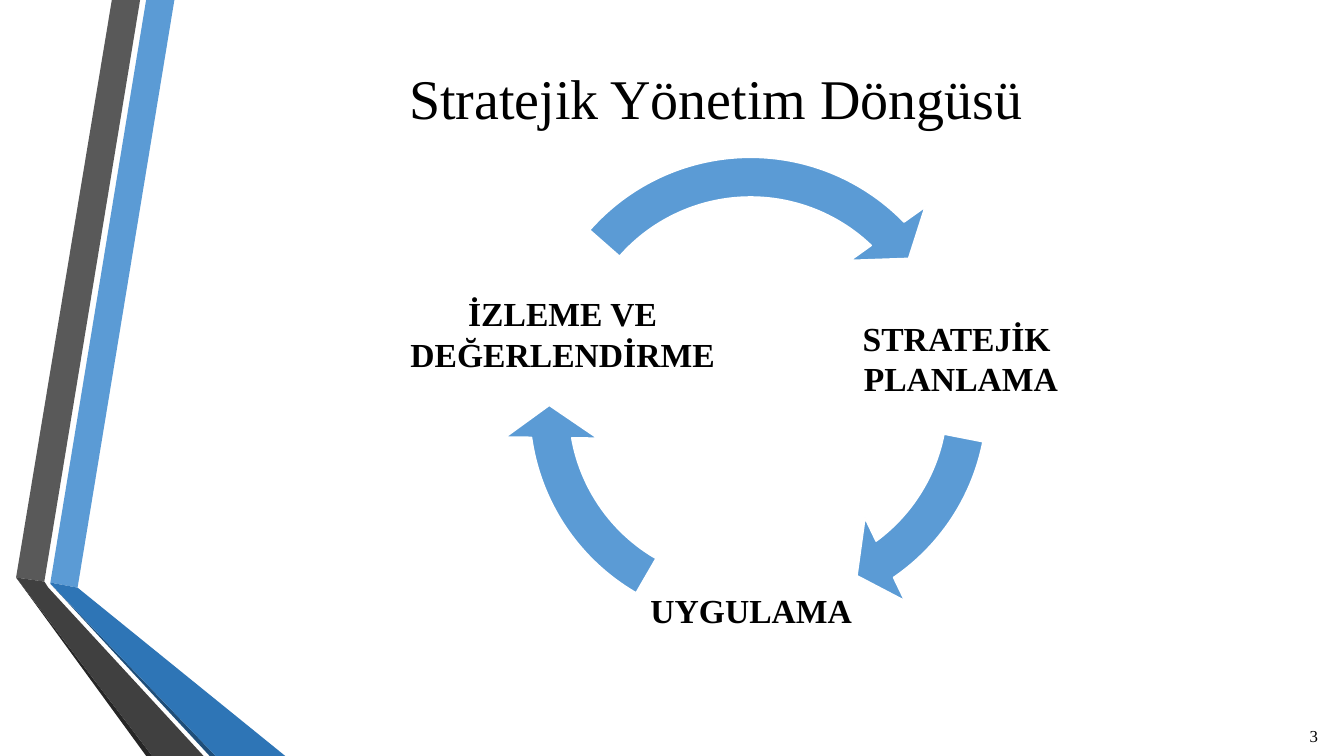
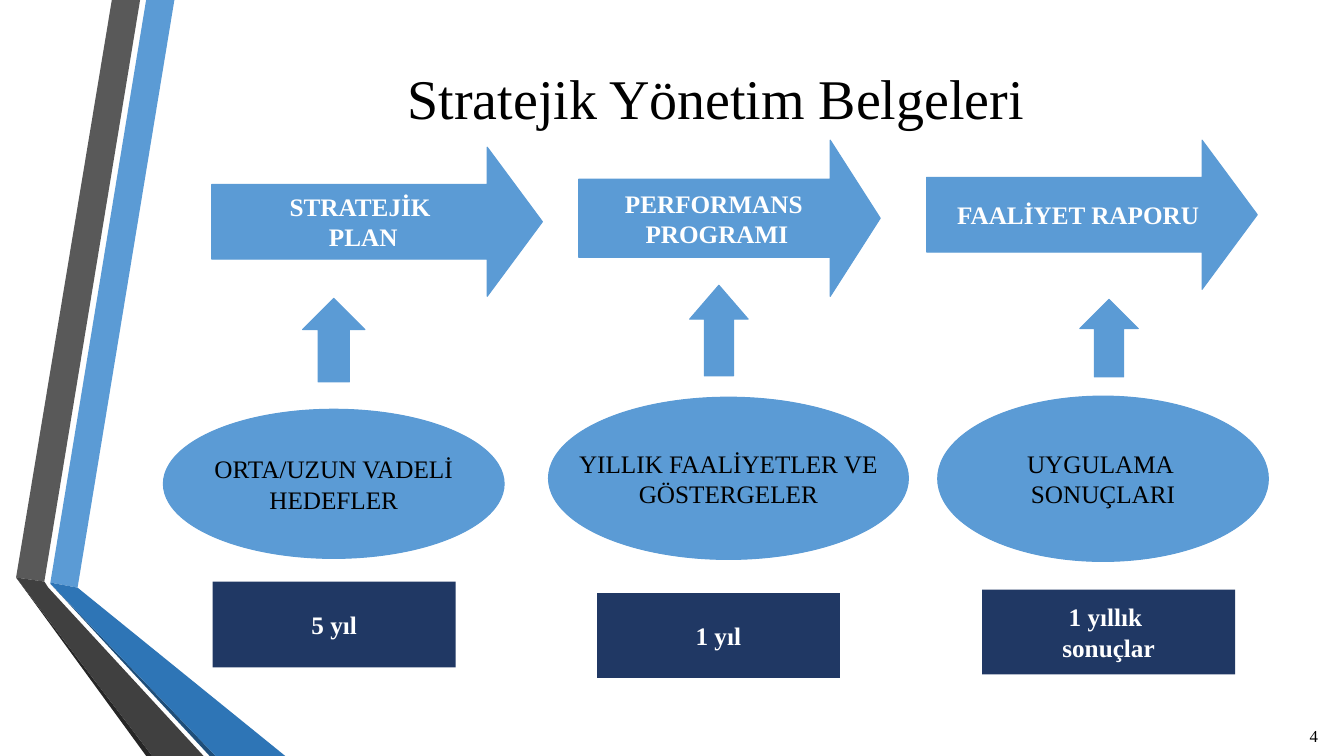
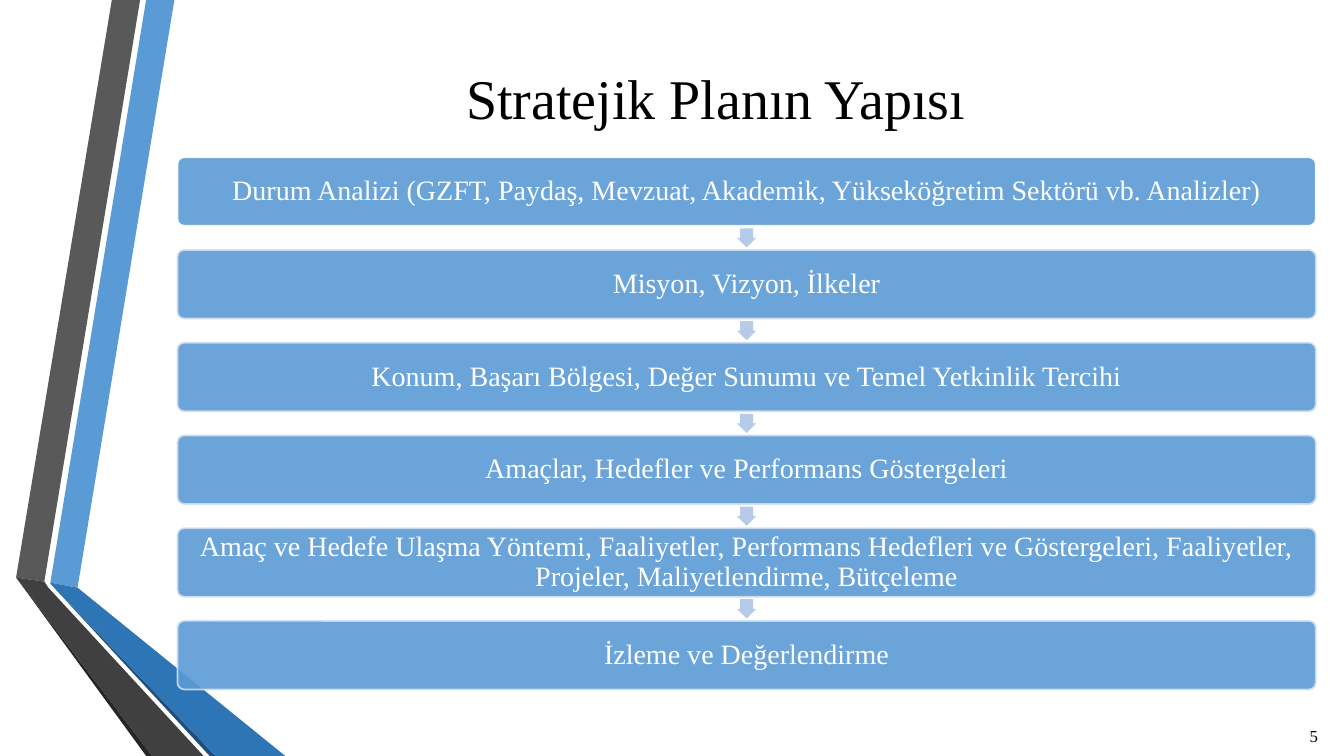
"""Build three slides on the strategic management cycle, its documents and the plan structure."""
import pptx
import pptx.dml.color
import pptx.enum.shapes
import pptx.enum.text
import pptx.oxml.ns
import pptx.util
from lxml import etree

Inches = pptx.util.Inches
Pt = pptx.util.Pt
RGBColor = pptx.dml.color.RGBColor
MSO_SHAPE = pptx.enum.shapes.MSO_SHAPE
qn = pptx.oxml.ns.qn

FONT = "Times New Roman"
BLACK = RGBColor(0x00, 0x00, 0x00)
WHITE = RGBColor(0xFF, 0xFF, 0xFF)
BLUE = RGBColor(0x5B, 0x9B, 0xD5)
MID_BLUE = RGBColor(0x2E, 0x75, 0xB6)
DEEP_BLUE = RGBColor(0x1F, 0x4E, 0x79)
NAVY = RGBColor(0x20, 0x38, 0x64)
PALE_BLUE = RGBColor(0xD2, 0xDE, 0xEF)
ARROW_BLUE = RGBColor(0xB5, 0xCB, 0xE7)
GREY = RGBColor(0x59, 0x59, 0x59)
DARK_GREY = RGBColor(0x40, 0x40, 0x40)
EDGE_GREY = RGBColor(0x26, 0x26, 0x26)

BANDS = [
    (BLUE, [(0.5, 5.78), (0.77, 5.83), (1.73, 0), (1.45, 0)]),
    (GREY, [(1.39, 0), (1.11, 0), (0.16, 5.73), (0.44, 5.77)]),
    (EDGE_GREY, [(0.16, 5.73), (1.45, 7.5), (1.51, 7.5)]),
    (DEEP_BLUE, [(0.5, 5.79), (2.08, 7.5), (2.14, 7.5)]),
    (MID_BLUE, [(0.5, 5.79), (2.14, 7.5), (2.83, 7.5), (0.77, 5.83), (0.5, 5.78)]),
    (DARK_GREY, [(2.02, 7.5), (0.48, 5.83), (0.44, 5.77), (0.16, 5.73), (1.51, 7.5)]),
]

CYCLE_LABELS = [
    ((8.52, 2.76, 2.02, 1.59), ["STRATEJİK ", "PLANLAMA"]),
    ((6.39, 5.04, 2.12, 2.02), ["UYGULAMA"]),
    ((3.87, 2.6, 3.42, 1.42), ["İZLEME VE DEĞERLENDİRME"]),
]
CYCLE_ARROWS = [
    ((5.28, 1.59), 32.85, 6.62),
    ((4.99, 1.66), 102.67, 72.06),
    ((5.06, 1.3), 188.91, 132.77),
]
CYCLE_SIZE = 4.77

DOCUMENTS = [
    ((2.1, 1.46, 3.28, 1.48), 0.37, ["STRATEJİK ", "PLAN"]),
    ((5.74, 1.39, 2.99, 1.55), 0.32, ["PERFORMANS ", "PROGRAMI"]),
    ((9.19, 1.39, 3.28, 1.48), 0.37, ["FAALİYET RAPORU"]),
]
UP_ARROWS = [
    ((3, 2.96, 0.62, 0.83), 0.5),
    ((6.84, 2.83, 0.58, 0.9), 0.58),
    ((10.71, 2.97, 0.58, 0.77), 0.5),
]
CONTENTS = [
    ((1.62, 4.06, 3.38, 1.48), ["ORTA/UZUN VADELİ", "HEDEFLER"]),
    ((5.44, 3.94, 3.57, 1.61), ["YILLIK FAALİYETLER VE", "GÖSTERGELER"]),
    ((9.3, 3.93, 3.28, 1.64), ["UYGULAMA ", "SONUÇLARI"]),
]
PERIODS = [
    (MSO_SHAPE.RECTANGLE, (2.11, 5.77, 2.41, 0.85), ["5 yıl"]),
    (MSO_SHAPE.FLOWCHART_PROCESS, (5.92, 5.88, 2.41, 0.85), ["1 yıl"]),
    (MSO_SHAPE.RECTANGLE, (9.74, 5.85, 2.51, 0.84), ["1 yıllık ", "sonuçlar"]),
]

PLAN_STEPS = [
    "Durum Analizi (GZFT, Paydaş, Mevzuat, Akademik, Yükseköğretim Sektörü vb. Analizler)",
    "Misyon, Vizyon, İlkeler",
    "Konum, Başarı Bölgesi, Değer Sunumu ve Temel Yetkinlik Tercihi",
    "Amaçlar, Hedefler ve Performans Göstergeleri",
    "Amaç ve Hedefe Ulaşma Yöntemi, Faaliyetler, Performans Hedefleri ve Göstergeleri, "
    "Faaliyetler, Projeler, Maliyetlendirme, Bütçeleme",
    "İzleme ve Değerlendirme",
]
STEP_LEFT, STEP_TOP, STEP_PITCH = 1.76, 1.56, 0.92
STEP_WIDTH, STEP_HEIGHT = 11.29, 0.68
STEP_ARROW = 0.19


def write(sp, lines, size, color, bold=False, wrap=True, inset=None, spacing=None):
    """Write centred lines, one paragraph each, into a shape."""
    tf = sp.text_frame
    tf.word_wrap = wrap
    tf.auto_size = pptx.enum.text.MSO_AUTO_SIZE.NONE
    tf.vertical_anchor = pptx.enum.text.MSO_ANCHOR.MIDDLE
    if inset is not None:
        tf.margin_left = tf.margin_right = Inches(inset)
        tf.margin_top = tf.margin_bottom = Inches(inset)
    for i, line in enumerate(lines):
        p = tf.add_paragraph() if i else tf.paragraphs[0]
        p.alignment = pptx.enum.text.PP_ALIGN.CENTER
        if spacing:
            p.line_spacing = spacing
        r = p.add_run()
        r.text = line
        r.font.name = FONT
        r.font.size = Pt(size)
        r.font.bold = bold
        r.font.color.rgb = color


def paint(sp, fill, line=None, width=0.75):
    """Give a shape a flat fill and an optional outline."""
    sp.shadow.inherit = False
    sp.fill.solid()
    sp.fill.fore_color.rgb = fill
    if line is None:
        sp.line.fill.background()
    else:
        sp.line.color.rgb = line
        sp.line.width = Pt(width)


def add_shape(s, kind, box, fill, line=None, width=0.75, adjust=()):
    """Add a painted preset shape."""
    sp = s.shapes.add_shape(kind, *map(Inches, box))
    paint(sp, fill, line, width)
    for i, value in enumerate(adjust):
        sp.adjustments[i] = value
    return sp


def add_label(s, box, lines, size, **style):
    """Add a black text box."""
    write(s.shapes.add_textbox(*map(Inches, box)), lines, size, BLACK, **style)


def set_opacity(sp, percent):
    """Make the fill and outline of a shape partly transparent."""
    for color in sp.element.spPr.iter(qn("a:srgbClr")):
        etree.SubElement(color, qn("a:alpha")).set("val", str(percent * 1000))


def add_bands(s, layout):
    """Draw the folded bands and place them behind everything on the layout."""
    group = s.shapes.add_group_shape()
    for color, points in BANDS:
        corners = [(Inches(x), Inches(y)) for x, y in points]
        builder = group.shapes.build_freeform(*corners[0])
        builder.add_line_segments(corners[1:], close=True)
        paint(builder.convert_to_shape(), color)
    layout.shapes.element.insert(2, group.element)


def add_slide(prs, layout, title, number):
    """Add a slide with its title and page number."""
    s = prs.slides.add_slide(layout)
    sp = s.shapes.title
    sp.left, sp.top, sp.width, sp.height = map(Inches, (1.62, 0, 10.96, 1.92))
    write(sp, [title], 40, BLACK)
    add_label(s, (12.73, 7.1, 0.6, 0.4), [str(number)], 12)
    return s


def draw_cycle(s):
    """Draw the three stages and the arrows between them."""
    for (left, top), end, start in CYCLE_ARROWS:
        add_shape(s, MSO_SHAPE.CIRCULAR_ARROW, (left, top, CYCLE_SIZE, CYCLE_SIZE),
                  BLUE, WHITE, 1.25, (0.083, 5.764, end, start, 0.096))
    for box, lines in CYCLE_LABELS:
        add_label(s, box, lines, 24, bold=True, inset=0.03)


def draw_documents(s):
    """Draw each document with its content and period below it."""
    for box, head, lines in DOCUMENTS:
        sp = add_shape(s, MSO_SHAPE.RIGHT_ARROW, box, BLUE, BLUE, adjust=(0.5, head))
        write(sp, lines, 18, WHITE, bold=True, wrap=False)
    for box, head in UP_ARROWS:
        add_shape(s, MSO_SHAPE.UP_ARROW, box, BLUE, BLUE, adjust=(0.5, head))
    for box, lines in CONTENTS:
        sp = add_shape(s, MSO_SHAPE.OVAL, box, BLUE, BLUE)
        write(sp, lines, 18, BLACK, wrap=False)
    for kind, box, lines in PERIODS:
        sp = add_shape(s, kind, box, NAVY)
        write(sp, lines, 18, WHITE, bold=True, wrap=False)


def draw_plan(s):
    """Draw the plan steps as a column of boxes joined by arrows."""
    gap = STEP_PITCH - STEP_HEIGHT
    arrow_left = STEP_LEFT + (STEP_WIDTH - STEP_ARROW) / 2
    for i, step in enumerate(PLAN_STEPS):
        top = STEP_TOP + i * STEP_PITCH
        sp = add_shape(s, MSO_SHAPE.ROUNDED_RECTANGLE, (STEP_LEFT, top, STEP_WIDTH, STEP_HEIGHT),
                       BLUE, PALE_BLUE if i else WHITE, 1.25, (0.1,))
        set_opacity(sp, 90)
        write(sp, [step], 20, WHITE, inset=0.05, spacing=0.9)
        if i:
            arrow_top = top - (gap + STEP_ARROW) / 2
            arrow = add_shape(s, MSO_SHAPE.RIGHT_ARROW,
                              (arrow_left, arrow_top, STEP_ARROW, STEP_ARROW),
                              ARROW_BLUE, adjust=(0.67, 0.5))
            arrow.rotation = 90


def main():
    """Build and save the presentation."""
    prs = pptx.Presentation()
    prs.slide_width, prs.slide_height = Inches(13.33), Inches(7.5)
    layout = prs.slide_layouts.get_by_name("Title Only")
    pages = [
        ("Stratejik Yönetim Döngüsü", draw_cycle),
        ("Stratejik Yönetim Belgeleri", draw_documents),
        ("Stratejik Planın Yapısı", draw_plan),
    ]
    for number, (title, draw) in enumerate(pages, start=3):
        draw(add_slide(prs, layout, title, number))
    add_bands(prs.slides[0], layout)
    prs.save("out.pptx")


if __name__ == "__main__":
    main()
